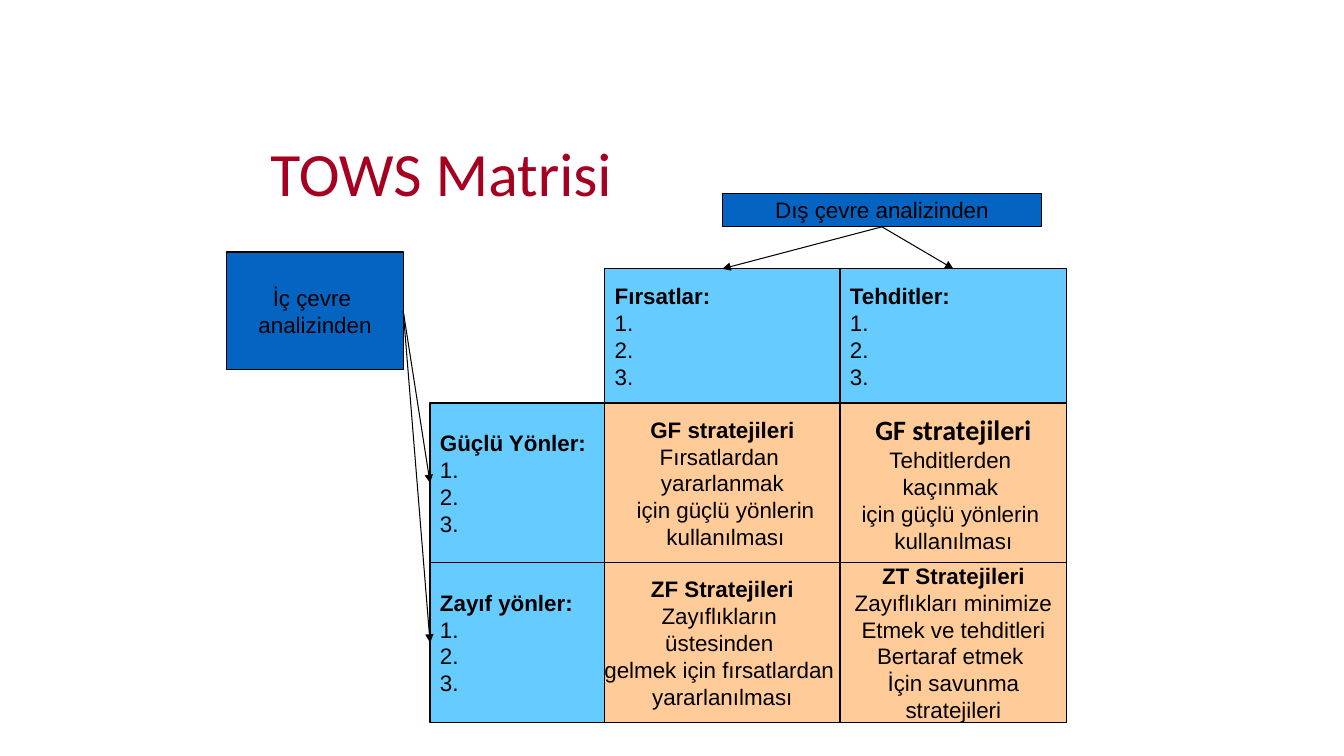
from pptx import Presentation
from pptx.dml.color import RGBColor
from pptx.enum import shapes as sh, text as tx
from pptx.oxml import parse_xml
from pptx.oxml.ns import nsdecls
from pptx.util import Pt

RED = RGBColor(0xA5, 0x00, 0x21)
SKY = RGBColor(0x66, 0xCC, 0xFF)
PEACH = RGBColor(0xFF, 0xCC, 0x99)
BLUE = RGBColor(0x05, 0x63, 0xC1)
BLACK = RGBColor(0, 0, 0)

TITLE = "TOWS Matrisi"
NUMS = ["1.", "2.", "3."]
CELLS = {
    (1, 0): ["Güçlü Yönler:"] + NUMS,
    (2, 0): ["Zayıf yönler:"] + NUMS,
    (0, 1): ["Fırsatlar:"] + NUMS,
    (0, 2): ["Tehditler:"] + NUMS,
    (1, 1): ["GF stratejileri", "Fırsatlardan ", "yararlanmak",
             " için güçlü yönlerin", " kullanılması"],
    (1, 2): ["GF stratejileri", "Tehditlerden ", "kaçınmak ",
             "için güçlü yönlerin ", "kullanılması"],
    (2, 1): ["ZF Stratejileri", "Zayıflıkların ", "üstesinden ",
             "gelmek için fırsatlardan ", "yararlanılması"],
    (2, 2): ["ZT Stratejileri", "Zayıflıkları minimize", "Etmek ve tehditleri",
             "Bertaraf etmek ", "İçin savunma", "stratejileri"],
}
COLS = [307.2, 432, 600, 762]
ROWS = [192, 288, 402, 516]
INNER = (["İç çevre ", "analizinden"], (162, 180, 126, 84))
OUTER = (["Dış çevre analizinden"], (516, 138, 228, 24))
BODY = {"name": "Arial", "size": Pt(16), "bold": False}
HEAD = {**BODY, "bold": True}
LARGE = {"name": "Calibri", "size": Pt(20), "bold": True}


def style(font, color, form):
    for key, val in form.items():
        setattr(font, key, val)
    font.color.rgb = color


def add_box(slide, lines, spot, fill, width, align, head):
    box = slide.shapes.add_shape(sh.MSO_SHAPE.RECTANGLE, *map(Pt, spot))
    box.shadow.inherit = False
    box.fill.solid()
    box.fill.fore_color.rgb = fill
    box.line.color.rgb = BLACK
    box.line.width = Pt(width)
    frame = box.text_frame
    frame.word_wrap = False
    frame.vertical_anchor = tx.MSO_ANCHOR.MIDDLE
    for i, line in enumerate(lines):
        para = frame.add_paragraph() if i else frame.paragraphs[0]
        para.alignment = align
        run = para.add_run()
        run.text = line
        style(run.font, BLACK, BODY if i else head)
    return box


def add_arrow(slide, start, side, end, goal):
    arrow = slide.shapes.add_connector(sh.MSO_CONNECTOR.STRAIGHT, 0, 0, 0, 0)
    arrow.begin_connect(start, side)
    arrow.end_connect(end, goal)
    arrow.line.color.rgb = BLACK
    arrow.line.width = Pt(0.75)
    arrow.line._get_or_add_ln().append(
        parse_xml(f'<a:tailEnd {nsdecls("a")} type="triangle"/>'))
    arrow._element.spPr.append(parse_xml(f'<a:effectLst {nsdecls("a")}/>'))


def main():
    deck = Presentation()
    deck.slide_width, deck.slide_height = Pt(960), Pt(540)
    slide = deck.slides.add_slide(deck.slide_layouts[5])

    title = slide.shapes.title
    title.left, title.top, title.width, title.height = map(Pt, (186, 84, 588, 84))
    title.text_frame.text = TITLE
    title.text_frame.vertical_anchor = tx.MSO_ANCHOR.MIDDLE
    para = title.text_frame.paragraphs[0]
    para.alignment = tx.PP_ALIGN.LEFT
    para.line_spacing = 0.9
    style(para.runs[0].font, RED, {"name": "Calibri", "size": Pt(44)})

    grid = {}
    for (row, col), lines in CELLS.items():
        left, top = COLS[col], ROWS[row]
        spot = (left, top, COLS[col + 1] - left, ROWS[row + 1] - top)
        inside = row and col
        grid[row, col] = add_box(
            slide, lines, spot, PEACH if inside else SKY, 1,
            tx.PP_ALIGN.CENTER if inside else tx.PP_ALIGN.LEFT,
            LARGE if (row, col) == (1, 2) else HEAD)

    inner, outer = [add_box(slide, lines, spot, BLUE, 0.75, tx.PP_ALIGN.CENTER, BODY)
                    for lines, spot in (INNER, OUTER)]
    for i in (1, 2):
        add_arrow(slide, inner, 3, grid[i, 0], 1)
        add_arrow(slide, outer, 2, grid[0, i], 0)

    deck.save("out.pptx")


if __name__ == "__main__":
    main()
